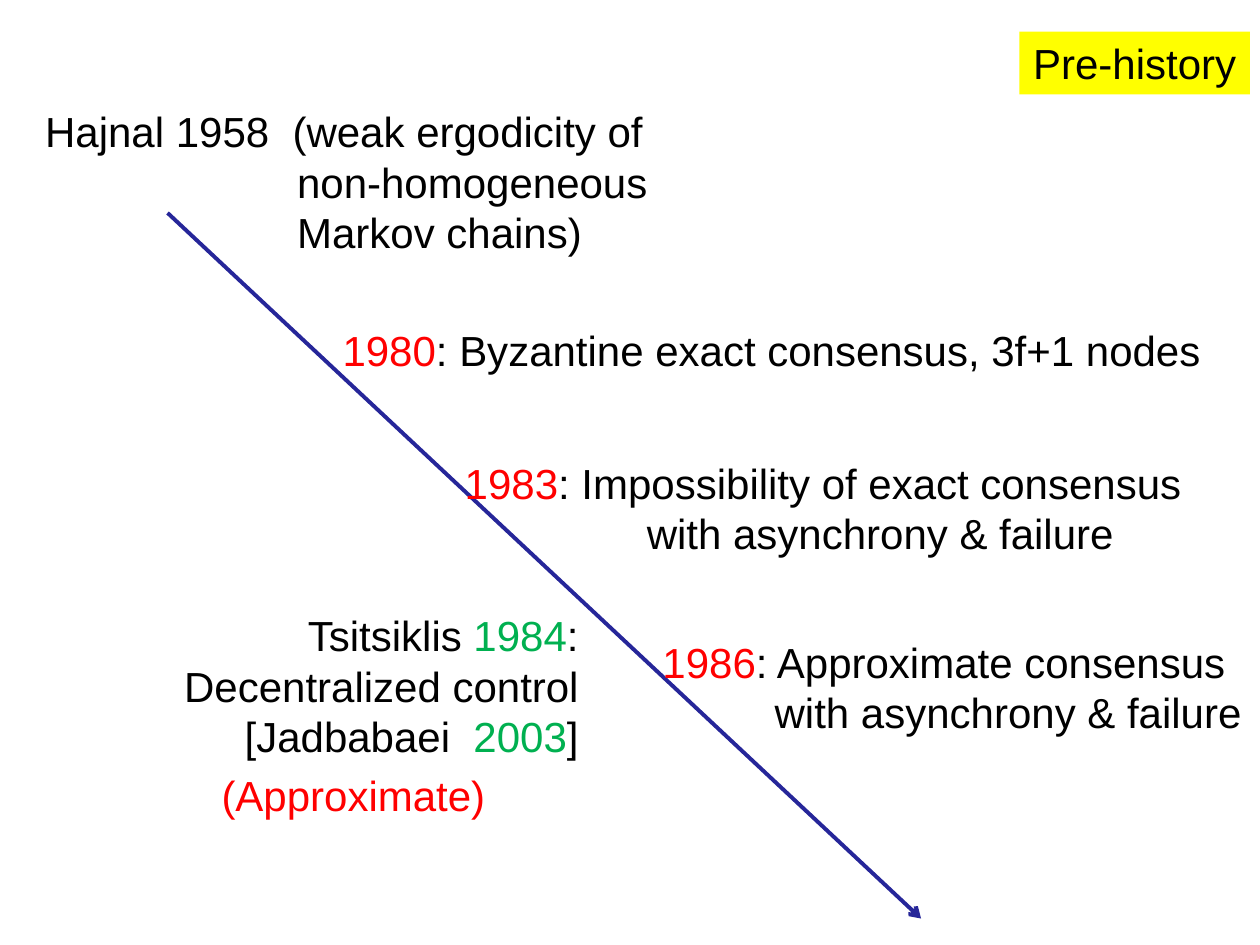
from lxml import etree
from pptx import Presentation
from pptx.dml.color import RGBColor
from pptx.enum.shapes import MSO_CONNECTOR
from pptx.enum.text import MSO_ANCHOR, MSO_AUTO_SIZE, PP_ALIGN
from pptx.oxml.ns import qn
from pptx.util import Inches, Pt

STRAIGHT = MSO_CONNECTOR.STRAIGHT
LEFT, CENTER, RIGHT = PP_ALIGN.LEFT, PP_ALIGN.CENTER, PP_ALIGN.RIGHT
MIDDLE = MSO_ANCHOR.MIDDLE
NO_FIT = MSO_AUTO_SIZE.NONE

BLACK = RGBColor(0x00, 0x00, 0x00)
RED = RGBColor(0xFF, 0x00, 0x00)
GREEN = RGBColor(0x00, 0xB0, 0x50)
YELLOW = RGBColor(0xFF, 0xFF, 0x00)
NAVY = RGBColor(0x26, 0x26, 0x99)

SLIDE_WIDTH, SLIDE_HEIGHT = Inches(10), Inches(7.5)
COLUMN, ROW = SLIDE_WIDTH / 100, SLIDE_HEIGHT / 75

HISTORY = [
    ((2.6, 7.9, 60, 13), 20, [("Hajnal 1958  (weak ergodicity of\vnon-homogeneous\vMarkov chains)", BLACK)]),
    ((26.2, 25.3, 70.8, 5), 0, [("1980", RED), (": Byzantine exact consensus, 3f+1 nodes", BLACK)]),
    ((35.9, 35.8, 62, 9.1), 14.45,
     [("1983", RED), (": Impossibility of exact consensus\vwith asynchrony & failure", BLACK)]),
    ((51.6, 50, 48.4, 9.1), 8.9,
     [("1986", RED), (": Approximate consensus\vwith asynchrony & failure", BLACK)]),
]
CONTROL = [("Tsitsiklis ", BLACK), ("1984", GREEN), (":\vDecentralized control\v[Jadbabaei  ", BLACK),
           ("2003", GREEN), ("]", BLACK)]


def place(box):
    """Turn a box in columns and rows into slide lengths."""
    left, top, width, height = box
    return round(left * COLUMN), round(top * ROW), round(width * COLUMN), round(height * ROW)


def write(para, spans, align=LEFT, margin=0, hang=0):
    """Fill a paragraph with coloured spans and set its font and indents."""
    para.alignment = align
    para.font.name, para.font.size = "Arial", Pt(24)
    para.space_before = Pt(4.8)
    properties = para._p.get_or_add_pPr()
    properties.set("marL", str(round((margin + hang) * COLUMN)))
    properties.set("indent", str(-round(hang * COLUMN)))
    for text, color in spans:
        for index, line in enumerate(text.split("\v")):
            if index:
                para.add_line_break()
            span = para.add_run()
            span.text = line
            span.font.color.rgb = color


def add_text(page, box):
    """Add a wrapping text box and return its frame."""
    frame = page.shapes.add_textbox(*place(box)).text_frame
    frame.word_wrap = True
    return frame


def add_heading(page, box):
    """Move the title into its yellow label."""
    title = page.shapes.title
    title.left, title.top, title.width, title.height = place(box)
    title.fill.solid()
    title.fill.fore_color.rgb = YELLOW
    frame = title.text_frame
    frame.word_wrap, frame.auto_size, frame.vertical_anchor = False, NO_FIT, MIDDLE
    write(frame.paragraphs[0], [("Pre-history", BLACK)], CENTER)


def add_timeline(page, box):
    """Draw the diagonal arrow of time across a box."""
    left, top, width, height = place(box)
    arrow = page.shapes.add_connector(STRAIGHT, left, top, left + width, top + height)
    arrow.line.color.rgb, arrow.line.width = NAVY, Pt(2.25)
    etree.SubElement(arrow.line._get_or_add_ln(), qn("a:tailEnd"), type="arrow")
    etree.SubElement(arrow._element.spPr, qn("a:effectLst"))


def add_event(page, box, hang, spans):
    """Write one dated result with a hanging indent."""
    write(add_text(page, box).paragraphs[0], spans, hang=hang)


def add_control_branch(page, box):
    """Write the decentralized control branch left of the arrow."""
    frame = add_text(page, box)
    write(frame.paragraphs[0], CONTROL, RIGHT)
    write(frame.add_paragraph(), [("(Approximate)", RED)], margin=4.6)


def main():
    """Build the slide and save the deck."""
    deck = Presentation()
    deck.slide_width, deck.slide_height = SLIDE_WIDTH, SLIDE_HEIGHT
    page = deck.slides.add_slide(deck.slide_layouts.get_by_name("Title Only"))
    add_timeline(page, (13.3, 16.9, 59.8, 56))
    for box, hang, spans in HISTORY:
        add_event(page, box, hang, spans)
    add_control_branch(page, (12, 47.9, 34.9, 18))
    add_heading(page, (80.9, 2.5, 18.3, 5))
    deck.save("out.pptx")


if __name__ == "__main__":
    main()
